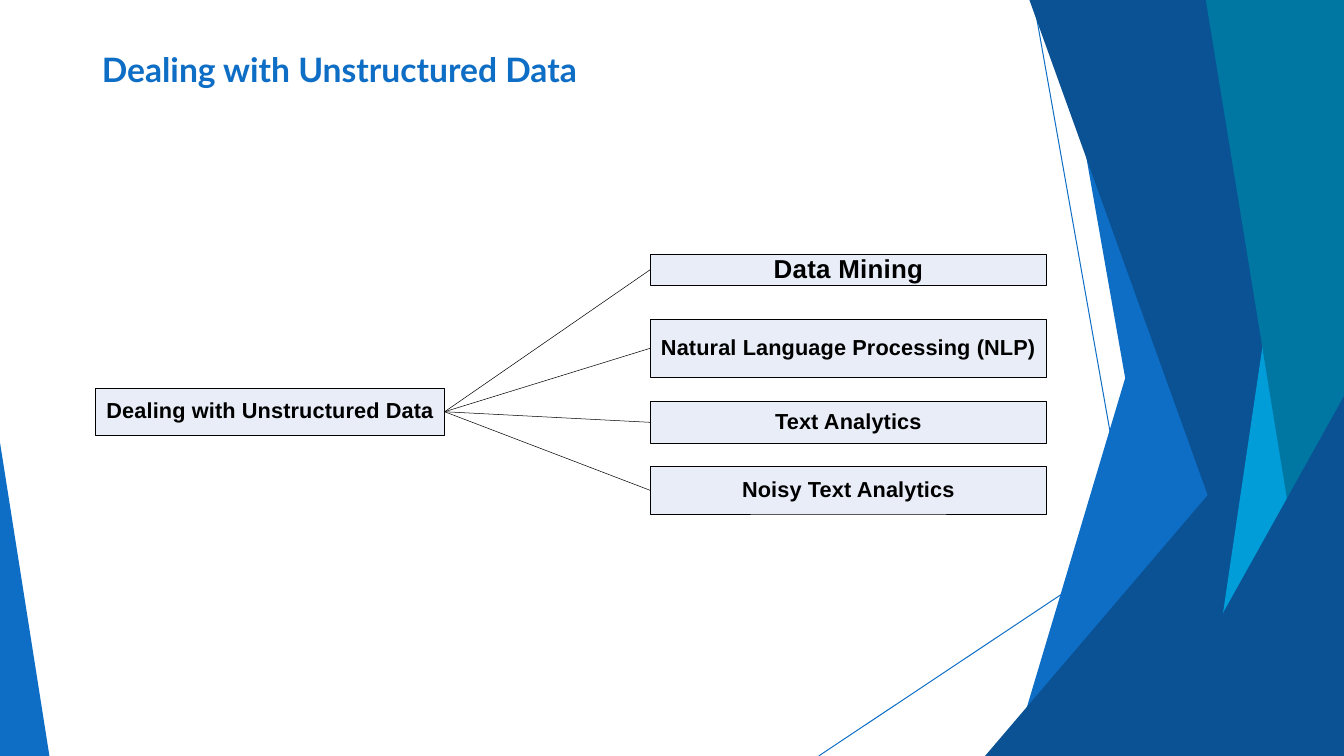
from dataclasses import dataclass

from pptx import Presentation
from pptx.dml.color import RGBColor
from pptx.enum.shapes import MSO_CONNECTOR as Connector, MSO_SHAPE as Preset
from pptx.enum.text import MSO_ANCHOR as Anchor, PP_ALIGN as Align
from pptx.oxml.ns import qn
from pptx.util import Inches, Pt
from lxml import etree


@dataclass(frozen=True)
class Theme:
    blue: str = "0E6EC5"
    navy: str = "0A5294"
    sky: str = "009DD9"
    teal: str = "0076A2"
    box: str = "E8EDF7"
    ink: str = "000000"
    title_font: str = "Lato"
    body_font: str = "Arial"
    title_size: float = 24
    lead_size: float = 18.5
    body_size: float = 15.5
    box_line: float = 0.38
    ray_line: float = 0.72


THEME = Theme()
WIDTH, HEIGHT = 13.33, 7.5

# Content
TITLE = "Dealing with Unstructured Data"
ROOT = (TITLE, 3.85, 0.47)  # text, top, height
METHODS = [  # text, top, height, size, letter spacing
    ("Data Mining", 2.52, 0.31, THEME.lead_size, 0.2),
    ("Natural Language Processing (NLP)", 3.17, 0.57, THEME.body_size, 0.1),
    ("Text Analytics", 3.98, 0.42, THEME.body_size, 0.1),
    ("Noisy Text Analytics", 4.63, 0.47, THEME.body_size, 0.1),
]
ROOT_LEFT, ROOT_WIDTH = 0.95, 3.46
METHOD_LEFT, METHOD_WIDTH = 6.45, 3.93

# Background: thin rays, then facets from back to front
RAYS = [((10.25, 0), (11.58, HEIGHT)), ((WIDTH, 4.03), (8.12, HEIGHT))]
TOP_RIGHT, BOTTOM_RIGHT = (WIDTH, 0), (WIDTH, HEIGHT)
FACETS = [
    (THEME.blue, [TOP_RIGHT, (12.28, 0), (10.04, HEIGHT), BOTTOM_RIGHT]),
    (THEME.blue, [TOP_RIGHT, (10.5, 0), (11.82, HEIGHT), BOTTOM_RIGHT]),
    (THEME.navy, [(WIDTH, 3.33), (9.77, HEIGHT), BOTTOM_RIGHT]),
    (THEME.navy, [TOP_RIGHT, (10.21, 0), (12.91, HEIGHT), BOTTOM_RIGHT]),
    (THEME.sky, [TOP_RIGHT, (13.03, 0), (11.92, HEIGHT), BOTTOM_RIGHT]),
    (THEME.teal, [TOP_RIGHT, (11.96, 0), (13.18, HEIGHT), BOTTOM_RIGHT]),
    (THEME.navy, [(WIDTH, 3.93), (11.34, HEIGHT), BOTTOM_RIGHT]),
    (THEME.blue, [(0, 4.39), (0, HEIGHT), (0.49, HEIGHT)]),
]


def color(value):
    return RGBColor.from_string(value)


def write(shape, text, *, font, size, ink, align=Align.CENTER, spacing=0.0):
    frame = shape.text_frame
    frame.word_wrap = True
    frame.vertical_anchor = Anchor.MIDDLE
    frame.margin_left = frame.margin_right = 0
    frame.margin_top = frame.margin_bottom = 0
    paragraph = frame.paragraphs[0]
    paragraph.alignment = align
    run = paragraph.add_run()
    run.text = text
    run.font.name, run.font.size, run.font.bold = font, Pt(size), True
    run.font.color.rgb = color(ink)
    run.font._element.set("spc", str(round(spacing * 100)))


def add_line(slide, start, end, ink, weight):
    line = slide.shapes.add_connector(
        Connector.STRAIGHT, *(Inches(v) for v in (*start, *end)))
    line.line.color.rgb = color(ink)
    line.line.width = Pt(weight)
    etree.SubElement(line._element.spPr, qn("a:effectLst"))


def add_facet(slide, fill, points):
    corners = [(Inches(x), Inches(y)) for x, y in points]
    builder = slide.shapes.build_freeform(*corners[0])
    builder.add_line_segments(corners[1:], close=True)
    facet = builder.convert_to_shape()
    facet.shadow.inherit = False
    facet.fill.solid()
    facet.fill.fore_color.rgb = color(fill)
    facet.line.fill.background()


def add_box(slide, text, left, top, width, height, size, spacing):
    box = slide.shapes.add_shape(
        Preset.RECTANGLE, *(Inches(v) for v in (left, top, width, height)))
    box.shadow.inherit = False
    box.fill.solid()
    box.fill.fore_color.rgb = color(THEME.box)
    box.line.color.rgb = color(THEME.ink)
    box.line.width = Pt(THEME.box_line)
    write(box, text, font=THEME.body_font, size=size, ink=THEME.ink,
          spacing=spacing)
    box.text_frame.margin_bottom = Inches(0.03)


def main():
    deck = Presentation()
    deck.slide_width, deck.slide_height = Inches(WIDTH), Inches(HEIGHT)
    slide = deck.slides.add_slide(deck.slide_layouts[6])

    # Background
    for start, end in RAYS:
        add_line(slide, start, end, THEME.blue, THEME.ray_line)
    for fill, points in FACETS:
        add_facet(slide, fill, points)

    # Title
    title = slide.shapes.add_textbox(
        Inches(1.01), Inches(0.48), Inches(11.83), Inches(0.41))
    write(title, TITLE, font=THEME.title_font, size=THEME.title_size,
          ink=THEME.blue, align=Align.LEFT)

    # Root box and its branches
    text, root_top, root_height = ROOT
    add_box(slide, text, ROOT_LEFT, root_top, ROOT_WIDTH, root_height,
            THEME.body_size, 0.1)
    fork = (ROOT_LEFT + ROOT_WIDTH, root_top + root_height / 2)
    for text, top, height, size, spacing in METHODS:
        add_line(slide, fork, (METHOD_LEFT, top + height / 2),
                 THEME.ink, THEME.box_line)
        add_box(slide, text, METHOD_LEFT, top, METHOD_WIDTH, height,
                size, spacing)

    deck.save("out.pptx")


if __name__ == "__main__":
    main()
